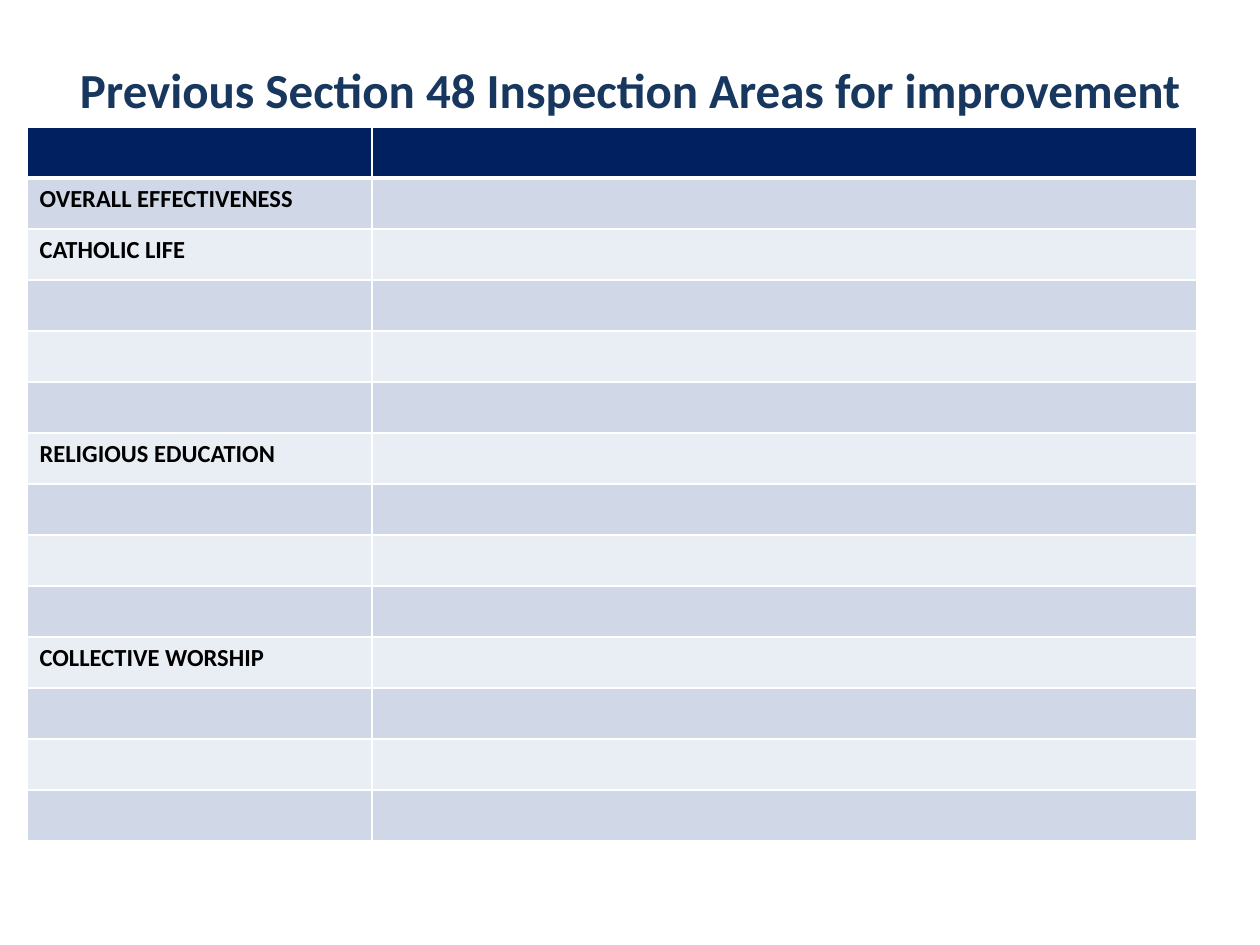
import pptx
import pptx.util
import pptx.dml.color
import pptx.enum.text
import lxml.etree

PX = 914400 / 126
NS = "http://schemas.openxmlformats.org/drawingml/2006/main"


def color(code):
    return pptx.dml.color.RGBColor.from_string(code)


def write(para, text, size, code):
    run = para.add_run()
    run.text = text
    form = {"name": "Calibri", "size": pptx.util.Pt(size), "bold": True}
    for key, value in form.items():
        setattr(run.font, key, value)
    run.font.color.rgb = color(code)


deck = pptx.Presentation()
deck.slide_width = round(1260 * PX)
deck.slide_height = round(945 * PX)
slide = deck.slides.add_slide(deck.slide_layouts[6])

# Title
box = slide.shapes.add_textbox(*[round(n * PX) for n in (63, 10, 1134, 158)])
frame = box.text_frame
form = {
    "word_wrap": True,
    "margin_left": 0,
    "margin_right": 0,
    "vertical_anchor": pptx.enum.text.MSO_ANCHOR.MIDDLE,
}
for key, value in form.items():
    setattr(frame, key, value)
title = frame.paragraphs[0]
title.alignment = pptx.enum.text.PP_ALIGN.CENTER
write(title, "Previous Section 48 Inspection Areas for improvement", 28, "17375E")

# Table grid
count = 14
wides = [345, 825]
high = 51
area = (27, 127, sum(wides), count * high)
grid = slide.shapes.add_table(count, 2, *[round(n * PX) for n in area]).table
for col, wide in zip(grid.columns, wides):
    col.width = round(wide * PX)
for row in grid.rows:
    row.height = round(high * PX)

# Row labels
labels = {
    1: "OVERALL EFFECTIVENESS",
    2: "CATHOLIC LIFE",
    6: "RELIGIOUS EDUCATION",
    10: "COLLECTIVE WORSHIP",
}
for num, label in labels.items():
    write(grid.cell(num, 0).text_frame.paragraphs[0], label, 14, "000000")

# White borders, a thicker rule under the header, and banded fills
bands = ["E9EDF4", "D0D8E8"]
for num, row in enumerate(grid.rows):
    for cell in row.cells:
        props = cell._tc.get_or_add_tcPr()
        for side in "LRTB":
            thick = (num, side) in [(0, "B"), (1, "T")]
            line = lxml.etree.SubElement(props, f"{{{NS}}}ln{side}")
            line.set("w", str(pptx.util.Pt(3 if thick else 1)))
            fill = lxml.etree.SubElement(line, f"{{{NS}}}solidFill")
            lxml.etree.SubElement(fill, f"{{{NS}}}srgbClr").set("val", "FFFFFF")
        cell.fill.solid()
        cell.fill.fore_color.rgb = color(bands[num % 2] if num else "002060")

deck.save("out.pptx")
